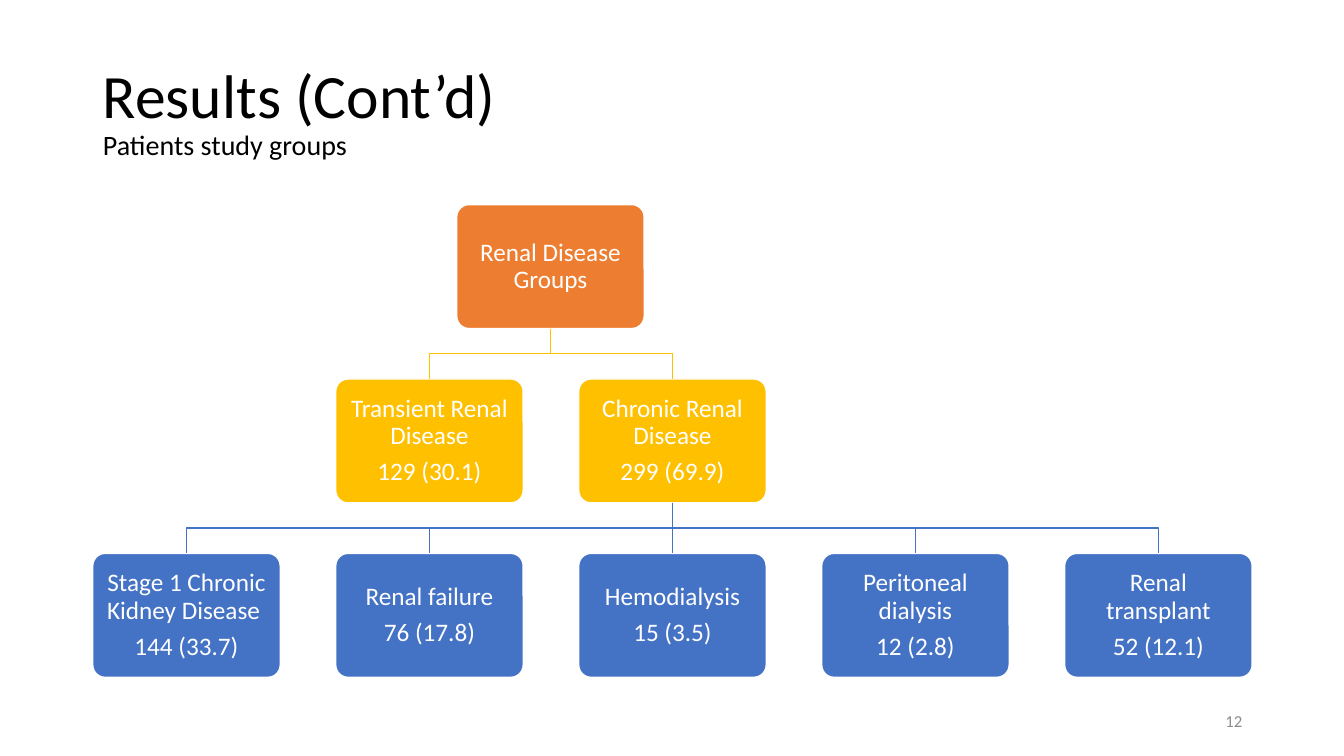
from dataclasses import dataclass

from lxml.etree import SubElement
from pptx import Presentation
from pptx.dml.color import RGBColor as Rgb
from pptx.enum.shapes import MSO_CONNECTOR as Link, MSO_SHAPE as Kind
from pptx.enum.text import MSO_ANCHOR as Anchor, MSO_AUTO_SIZE as Fit, PP_ALIGN as Align
from pptx.oxml.ns import qn
from pptx.util import Pt

PX = 9144
LEFT, TOP = 92, 203
COL, ROW = 241, 173
WIDE, HIGH = 186, 123
INSET = 7


@dataclass(frozen=True)
class Theme:
    font: str = "Calibri"
    ink: str = "000000"
    paper: str = "FFFFFF"
    gray: str = "8C8C8C"
    root: str = "ED7D31"
    branch: str = "FFC000"
    leaf: str = "4472C4"
    head: int = 44
    sub: int = 20
    label: int = 18
    small: int = 12
    line: int = 1


THEME = Theme()

BRANCHES = [
    (1, "Transient Renal Disease", "129 (30.1)"),
    (2, "Chronic Renal Disease", "299 (69.9)"),
]
LEAVES = [
    (0, "Stage 1 Chronic Kidney Disease ", "144 (33.7)"),
    (1, "Renal failure", "76 (17.8)"),
    (2, "Hemodialysis", "15 (3.5)"),
    (3, "Peritoneal dialysis", "12 (2.8)"),
    (4, "Renal transplant", "52 (12.1)"),
]


def place(*sizes):
    return [size * PX for size in sizes]


def style(run, size, color):
    run.font.name = THEME.font
    run.font.size = Pt(size)
    run.font.color.rgb = Rgb.from_string(color)


def stroke(shape, color):
    shape.line.color.rgb = Rgb.from_string(color)
    shape.line.width = Pt(THEME.line)


def add_title(slide, head, sub):
    title = slide.shapes.title
    title.left, title.top, title.width, title.height = place(92, 40, 1150, 145)
    frame = title.text_frame
    frame.text = f"{head}\v{sub}"
    frame.auto_size = Fit.NONE
    frame.vertical_anchor = Anchor.MIDDLE
    para = frame.paragraphs[0]
    para.alignment = Align.LEFT
    para.line_spacing = 0.9
    for run, size in zip(para.runs, (THEME.head, THEME.sub)):
        style(run, size, THEME.ink)


def add_number(slide, text):
    frame = slide.shapes.add_textbox(*place(942, 695, 300, 40)).text_frame
    frame.word_wrap = True
    frame.vertical_anchor = Anchor.MIDDLE
    frame.text = text
    para = frame.paragraphs[0]
    para.alignment = Align.RIGHT
    style(para.runs[0], THEME.small, THEME.gray)


def add_box(slide, col, row, color, *lines):
    left, top = LEFT + int(col * COL), TOP + row * ROW
    box = slide.shapes.add_shape(Kind.ROUNDED_RECTANGLE, *place(left, top, WIDE, HIGH))
    box.adjustments[0] = 0.1
    box.shadow.inherit = False
    box.fill.solid()
    box.fill.fore_color.rgb = Rgb.from_string(color)
    stroke(box, THEME.paper)
    frame = box.text_frame
    frame.word_wrap = True
    frame.vertical_anchor = Anchor.MIDDLE
    frame.margin_left = frame.margin_right = INSET * PX
    frame.margin_top = frame.margin_bottom = INSET * PX
    frame.text = "\n".join(lines)
    for para in frame.paragraphs:
        para.alignment = Align.CENTER
        para.line_spacing = 0.9
        para.space_after = Pt(0.35 * THEME.label)
        style(para.runs[0], THEME.label, THEME.paper)
    return box


def add_bend(slide, start, end, color):
    (x, y), (goal, low) = start, end
    mid = (y + low) // 2
    pen = slide.shapes.build_freeform(x, y)
    pen.add_line_segments([(x, mid), (goal, mid), (goal, low)], close=False)
    bend = pen.convert_to_shape()
    bend.shadow.inherit = False
    bend.fill.background()
    stroke(bend, color)


def add_link(slide, upper, lower, color):
    start = upper.left + upper.width // 2, upper.top + upper.height
    end = lower.left + lower.width // 2, lower.top
    if start[0] != end[0]:
        add_bend(slide, start, end, color)
        return
    link = slide.shapes.add_connector(Link.STRAIGHT, *start, *end)
    link.begin_connect(upper, 2)
    link.end_connect(lower, 0)
    stroke(link, color)
    SubElement(link._element.spPr, qn("a:effectLst"))


def add_tier(slide, parent, row, color, items):
    boxes = []
    for col, name, count in items:
        box = add_box(slide, col, row, color, name, count)
        add_link(slide, parent, box, color)
        boxes.append(box)
    return boxes


def main():
    deck = Presentation()
    deck.slide_width, deck.slide_height = place(1333, 750)
    slide = deck.slides.add_slide(deck.slide_layouts[5])
    add_title(slide, "Results (Cont’d)", "Patients study groups")
    add_number(slide, "12")
    root = add_box(slide, 1.5, 0, THEME.root, "Renal Disease Groups")
    chronic = add_tier(slide, root, 1, THEME.branch, BRANCHES)[-1]
    add_tier(slide, chronic, 2, THEME.leaf, LEAVES)
    deck.save("out.pptx")


if __name__ == "__main__":
    main()
